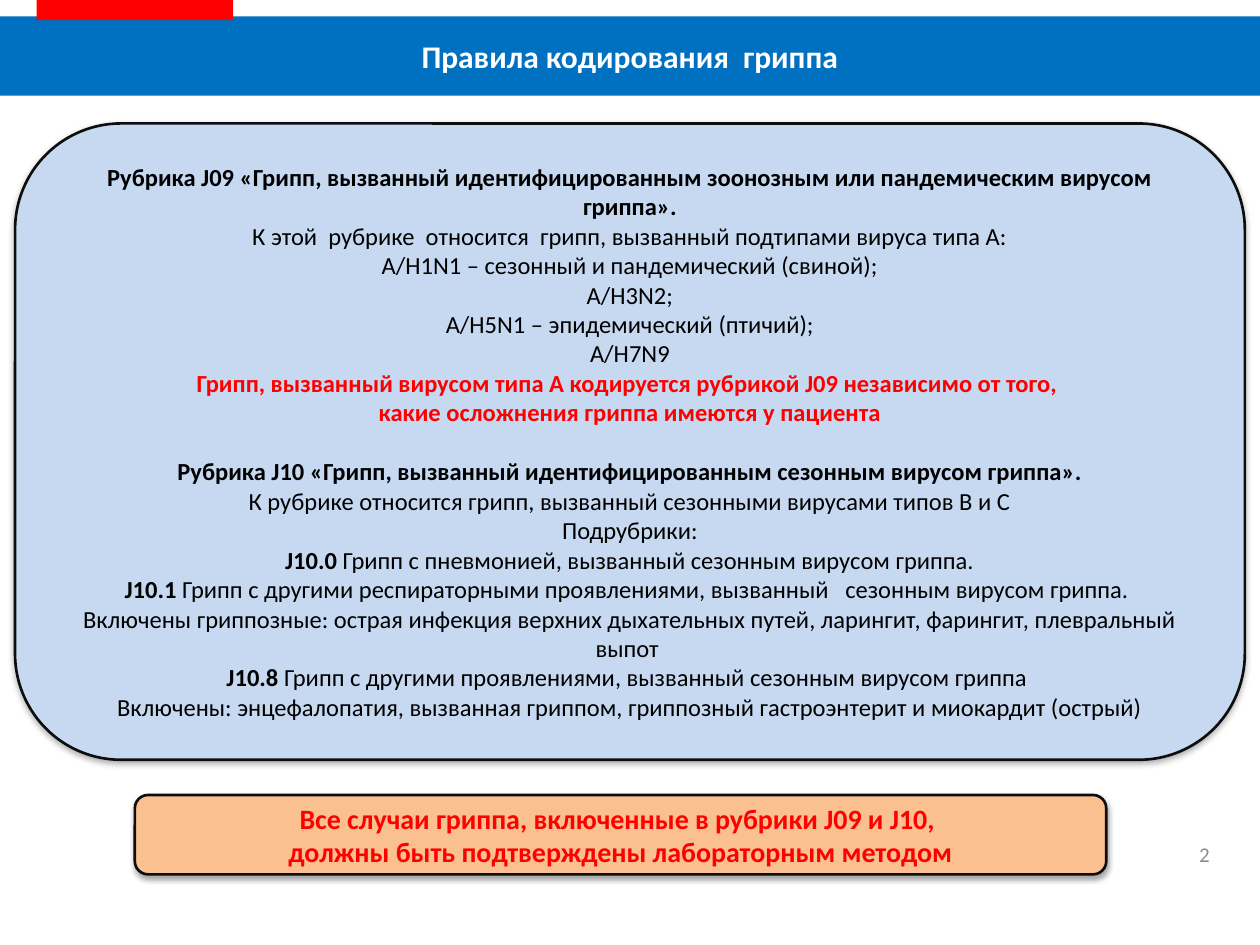
from lxml import etree
from pptx import Presentation
from pptx.dml.color import RGBColor
from pptx.enum.shapes import MSO_SHAPE
from pptx.enum.text import MSO_ANCHOR, PP_ALIGN
from pptx.oxml.ns import qn
from pptx.util import Inches, Pt

RECTANGLE = MSO_SHAPE.RECTANGLE
ROUNDED = MSO_SHAPE.ROUNDED_RECTANGLE
MIDDLE = MSO_ANCHOR.MIDDLE
CENTER = PP_ALIGN.CENTER
RIGHT = PP_ALIGN.RIGHT

WHITE = RGBColor(0xFF, 0xFF, 0xFF)
BLACK = RGBColor(0x00, 0x00, 0x00)
RED = RGBColor(0xFF, 0x00, 0x00)
BLUE = RGBColor(0x00, 0x70, 0xC0)
PALE_BLUE = RGBColor(0xC6, 0xD9, 0xF1)
PEACH = RGBColor(0xFA, 0xC0, 0x90)
OUTLINE = RGBColor(0x0D, 0x0D, 0x0D)
GREY = RGBColor(0x8C, 0x8C, 0x8C)

FONT = "Calibri"

# Each line is (bold part, regular part).
J09_LINES = [
    ("Рубрика J09 «Грипп, вызванный идентифицированным зоонозным или "
     "пандемическим вирусом гриппа».", ""),
    ("", "К этой  рубрике  относится  грипп, вызванный подтипами вируса типа А:"),
    ("", "A/H1N1 – сезонный и пандемический (свиной);"),
    ("", "A/H3N2;"),
    ("", "A/H5N1 – эпидемический (птичий);"),
    ("", "A/H7N9"),
]
J09_RULE = [
    ("Грипп, вызванный вирусом типа А кодируется рубрикой J09 независимо от того, ", ""),
    ("какие осложнения гриппа имеются у пациента", ""),
]
J10_LINES = [
    ("Рубрика J10 «Грипп, вызванный идентифицированным сезонным вирусом гриппа».", ""),
    ("", "К рубрике относится грипп, вызванный сезонными вирусами типов В и С"),
    ("", "Подрубрики:"),
    ("J10.0", " Грипп с пневмонией, вызванный сезонным вирусом гриппа."),
    ("J10.1", " Грипп с другими респираторными проявлениями, вызванный   "
              "сезонным вирусом гриппа. "),
    ("", "Включены гриппозные: острая инфекция верхних дыхательных путей, "
         "ларингит, фарингит, плевральный выпот "),
    ("J10.8", " Грипп с другими проявлениями, вызванный сезонным вирусом гриппа "),
    ("", "Включены: энцефалопатия, вызванная гриппом, гриппозный гастроэнтерит "
         "и миокардит (острый)"),
]
LAB_LINES = [
    ("Все случаи гриппа, включенные в рубрики J09 и J10, ", ""),
    ("должны быть подтверждены лабораторным методом", ""),
]


def add_block(slide, kind, left, top, width, height, fill):
    block = slide.shapes.add_shape(
        kind, Inches(left), Inches(top), Inches(width), Inches(height))
    block.shadow.inherit = False
    block.fill.solid()
    block.fill.fore_color.rgb = fill
    block.line.fill.background()
    block.text_frame.vertical_anchor = MIDDLE
    return block


def add_panel(slide, left, top, width, height, fill):
    """Rounded block with a dark outline and a soft shadow below it."""
    panel = add_block(slide, ROUNDED, left, top, width, height, fill)
    panel.line.color.rgb = OUTLINE
    panel.line.width = Pt(1.5)
    effects = panel._element.spPr.find(qn("a:effectLst"))
    shadow = etree.SubElement(
        effects, qn("a:outerShdw"), blurRad=str(Pt(3.1)), dist=str(Pt(1.8)),
        dir="5400000", rotWithShape="0")
    color = etree.SubElement(shadow, qn("a:srgbClr"), val="000000")
    etree.SubElement(color, qn("a:alpha"), val="35000")
    return panel


def write_lines(frame, lines, size, color, align=CENTER, gap=0):
    """Append lines to the frame, with a gap in points before the first."""
    for index, (bold, regular) in enumerate(lines):
        is_first = not frame.paragraphs[0].runs
        paragraph = frame.paragraphs[0] if is_first else frame.add_paragraph()
        paragraph.alignment = align
        if index == 0 and gap:
            paragraph.space_before = Pt(gap)
        paragraph.font.name = FONT
        paragraph.font.size = Pt(size)
        paragraph.font.color.rgb = color
        for text, is_bold in ((bold, True), (regular, False)):
            if text:
                run = paragraph.add_run()
                run.text = text
                run.font.bold = is_bold


def add_header(slide):
    title = add_block(slide, RECTANGLE, 0, 0.13, 10, 0.63, BLUE)
    write_lines(title.text_frame, [("Правила кодирования  гриппа", "")], 18, WHITE)
    add_block(slide, RECTANGLE, 0.29, 0, 1.56, 0.16, RED)


def add_page_number(slide):
    number = slide.shapes.add_textbox(
        Inches(7.37), Inches(6.58), Inches(2.33), Inches(0.4))
    number.text_frame.word_wrap = True
    number.text_frame.vertical_anchor = MIDDLE
    write_lines(number.text_frame, [("", "2")], 12, GREY, RIGHT)


def main():
    deck = Presentation()
    deck.slide_width = Inches(10)
    deck.slide_height = Inches(7.5)
    slide = deck.slides.add_slide(deck.slide_layouts[6])

    add_header(slide)
    add_page_number(slide)

    rubrics = add_panel(slide, 0.12, 0.98, 9.76, 5.05, PALE_BLUE).text_frame
    write_lines(rubrics, J09_LINES, 14, BLACK)
    write_lines(rubrics, J09_RULE, 14, RED)
    write_lines(rubrics, J10_LINES, 14, BLACK, gap=17)

    lab_note = add_panel(slide, 1.07, 6.31, 7.71, 0.63, PEACH).text_frame
    write_lines(lab_note, LAB_LINES, 16, RED)

    deck.save("out.pptx")


if __name__ == "__main__":
    main()
